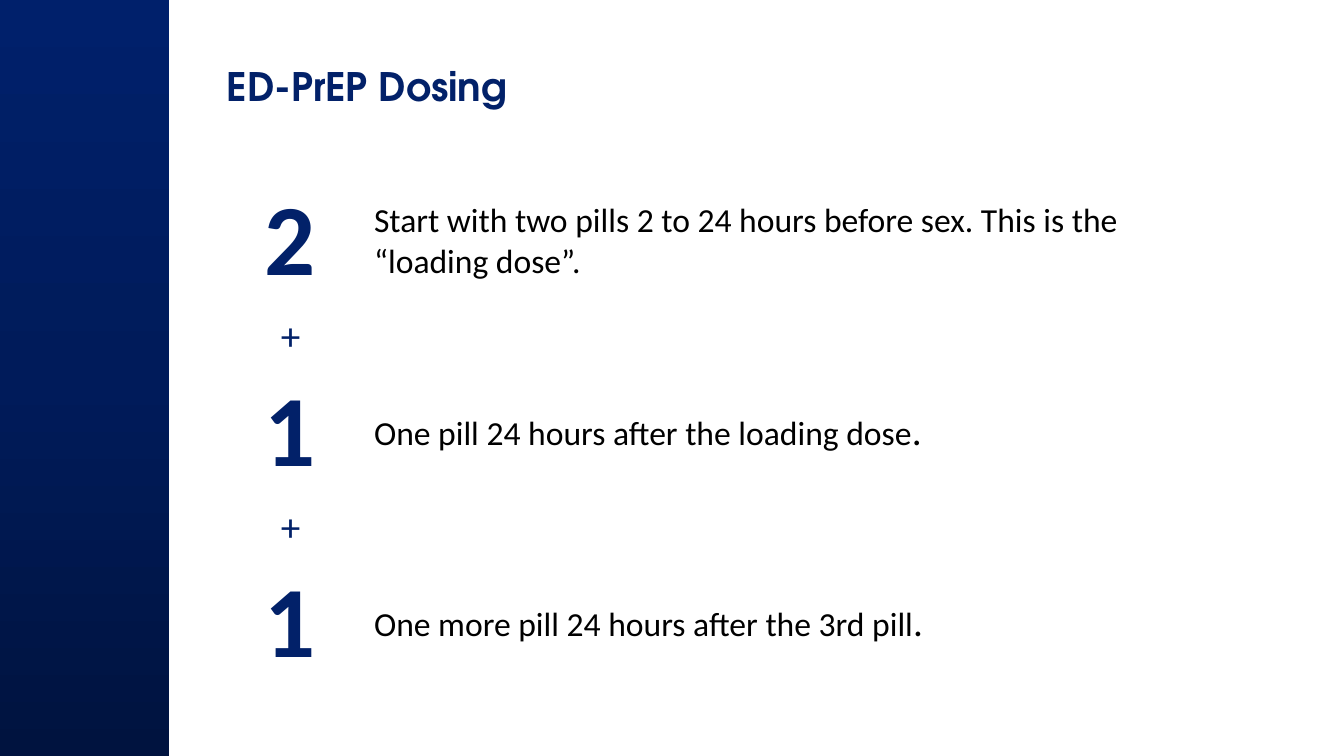
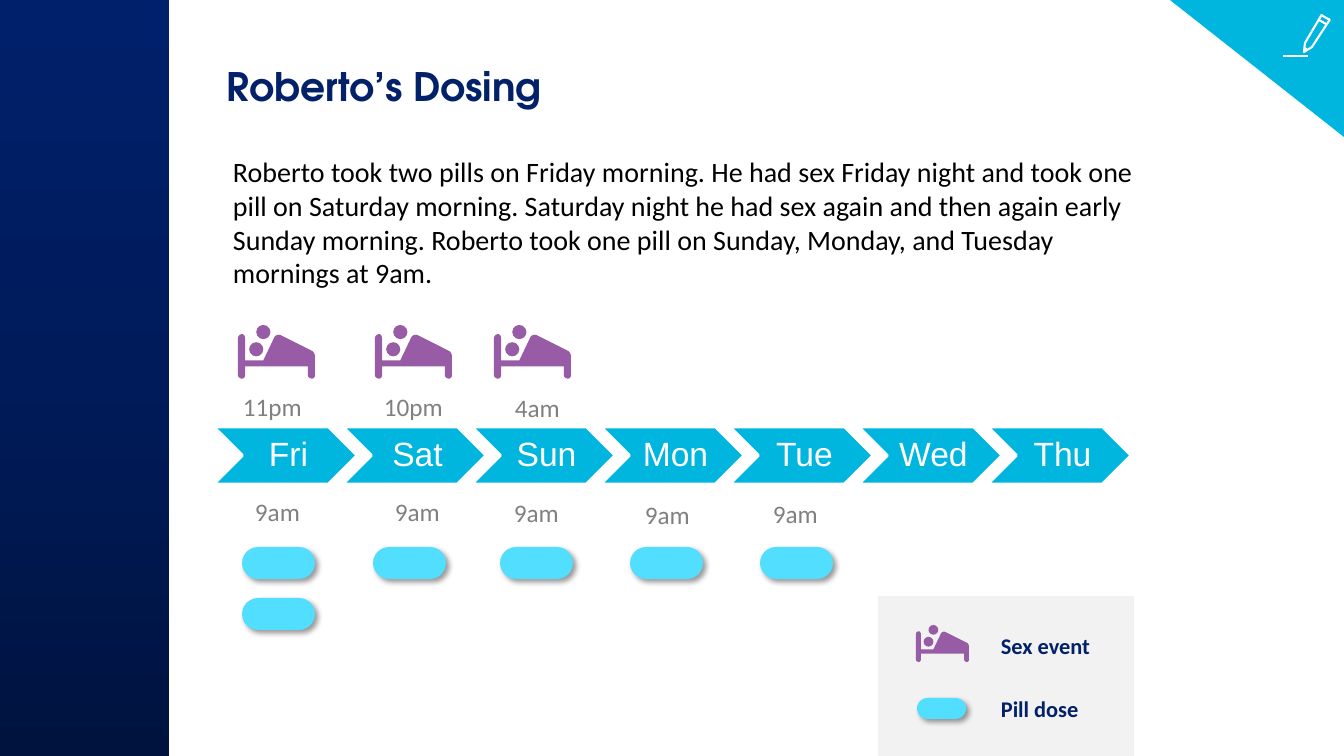
"""Build two slides on event-driven PrEP dosing: the rule and a worked example."""
from copy import deepcopy

from lxml.etree import SubElement
from pptx import Presentation
from pptx.dml.color import RGBColor
from pptx.enum.shapes import MSO_CONNECTOR, MSO_SHAPE
from pptx.enum.text import MSO_ANCHOR, PP_ALIGN
from pptx.oxml.ns import qn
from pptx.util import Emu, Pt

SLIDE_WIDTH, SLIDE_HEIGHT = 1344, 756
SCALE = 12192000 / SLIDE_WIDTH
COLORS = {
    "navy": "022169", "band_bottom": "00133F", "band_middle": "001B5A", "band_top": "00206B",
    "cyan": "00B5DE", "pill": "52DFFF", "purple": "975CA5", "panel": "F2F2F2",
    "gray": "808080", "black": "000000", "white": "FFFFFF",
}
TITLE_FONT, BODY_FONT, DAY_FONT = "TeX Gyre Adventor", "Calibri", "Arial"

DOSING_TITLE = "ED-PrEP Dosing"
DOSES = [
    ("2", "Start with two pills 2 to 24 hours before sex. This is the “loading dose”.", ""),
    ("+", "", ""),
    ("1", "One pill 24 hours after the loading dose", "."),
    ("+", "", ""),
    ("1", "One more pill 24 hours after the 3rd pill", "."),
]
DOSE_COLUMNS = (147, 785)
DOSE_HEIGHT, PLUS_HEIGHT = 133, 58

EXAMPLE_TITLE = "Roberto’s Dosing"
STORY = (
    "Roberto took two pills on Friday morning. He had sex Friday night and took one pill on "
    "Saturday morning. Saturday night he had sex again and then again early Sunday morning. "
    "Roberto took one pill on Sunday, Monday, and Tuesday mornings at 9am."
)
DAYS = ["Fri", "Sat", "Sun", "Mon", "Tue", "Wed", "Thu"]
DAY_LEFT, DAY_TOP, DAY_PITCH = 214, 427, 129
EVENTS = [("11pm", 238, 233, 386), ("10pm", 375, 374, 386), ("4am", 494, 505, 387)]
PILL_TIMES = [
    ("9am", 242, 245, 491, 2), ("9am", 373, 385, 491, 1), ("9am", 500, 504, 492, 1),
    ("9am", 630, 635, 494, 1), ("9am", 760, 763, 493, 1),
]
PILL_TOP, PILL_PITCH, BED_TOP = 547, 51, 325
LEGEND = [("Sex event", 627), ("Pill dose", 690)]

BED_WIDTH = 76
BED_HEADS = [(11, 17), (18, 0)]
BED_FRAME = [
    (72, 25), (42, 10), (40, 9, 37, 10, 36, 12), (25, 35), (7, 35), (7, 13),
    (7, 11, 6, 9, 4, 9), (2, 9, 0, 11, 0, 13), (0, 50), (0, 51, 2, 53, 4, 53),
    (6, 53, 7, 51, 7, 50), (7, 41), (69, 41), (69, 50), (69, 51, 71, 53, 73, 53),
    (75, 53, 76, 51, 76, 50), (76, 31), (76, 29, 75, 26, 72, 25),
]
PENCIL_OUTLINE = [
    (1312, 47), (1304, 52), (1305, 43), (1321, 16), (1321, 15, 1322, 15, 1323, 16),
    (1328, 19), (1330, 19, 1330, 20, 1329, 21),
]
PENCIL_STROKES = [(1319, 20, 1326, 24), (1305, 48, 1307, 50), (1283, 56, 1308, 56)]


def px(length):
    return Emu(round(length * SCALE))


def color(name):
    return RGBColor.from_string(COLORS[name])


def write_text(frame, text, size=18, font=BODY_FONT, fill="black", bold=False,
               align=PP_ALIGN.LEFT, spacing=None):
    paragraph = frame.paragraphs[0]
    paragraph.alignment = align
    if spacing:
        paragraph.line_spacing = spacing
    run = paragraph.add_run()
    run.text = text
    run.font.size, run.font.name, run.font.bold = Pt(size), font, bold
    run.font.color.rgb = color(fill)


def add_label(slide, text, left, top, width, height, wrap=False, **text_format):
    frame = slide.shapes.add_textbox(px(left), px(top), px(width), px(height)).text_frame
    frame.word_wrap = wrap
    write_text(frame, text, **text_format)


def paint(shape, fill=None, line=None, line_width=1.5):
    shape.shadow.inherit = False
    if fill:
        shape.fill.solid()
        shape.fill.fore_color.rgb = color(fill)
    else:
        shape.fill.background()
    if line:
        shape.line.color.rgb = color(line)
        shape.line.width = Pt(line_width)
    else:
        shape.line.fill.background()


def add_shape(slide, kind, left, top, width, height, **paint_format):
    shape = slide.shapes.add_shape(kind, px(left), px(top), px(width), px(height))
    paint(shape, **paint_format)
    return shape


def flatten(segments, steps=5):
    points = [segments[0]]
    for segment in segments[1:]:
        if len(segment) == 2:
            points.append(segment)
            continue
        controls = [points[-1], segment[:2], segment[2:4], segment[4:]]
        for step in range(1, steps + 1):
            t = step / steps
            weights = ((1 - t) ** 3, 3 * t * (1 - t) ** 2, 3 * t * t * (1 - t), t ** 3)
            points.append(tuple(
                sum(weight * point[axis] for weight, point in zip(weights, controls))
                for axis in (0, 1)))
    return points


def add_outline(slide, segments, left=0, top=0, factor=1, **paint_format):
    points = [(px(left + x * factor), px(top + y * factor)) for x, y in flatten(segments)]
    builder = slide.shapes.build_freeform(*points[0], scale=1.0)
    builder.add_line_segments(points[1:], close=True)
    paint(builder.convert_to_shape(), **paint_format)


def add_bed(slide, left, top, width):
    factor = width / BED_WIDTH
    for x, y in BED_HEADS:
        add_shape(slide, MSO_SHAPE.OVAL, left + x * factor, top + y * factor,
                  14 * factor, 14 * factor, fill="purple")
    add_outline(slide, BED_FRAME, left, top, factor, fill="purple")


def add_pill(slide, left, top, width, height):
    pill = add_shape(slide, MSO_SHAPE.ROUNDED_RECTANGLE, left, top, width, height, fill="pill")
    pill.adjustments[0] = 0.5
    effects = pill.element.spPr.find(qn("a:effectLst"))
    shadow = SubElement(effects, qn("a:outerShdw"), blurRad=str(Pt(4)), dist=str(Pt(3)),
                        dir="2700000", algn="tl", rotWithShape="0")
    tint = SubElement(shadow, qn("a:srgbClr"), val=COLORS["black"])
    SubElement(tint, qn("a:alpha"), val="40000")


def add_stroke(slide, *ends):
    stroke = slide.shapes.add_connector(MSO_CONNECTOR.STRAIGHT, *map(px, ends))
    stroke.line.color.rgb = color("white")
    stroke.line.width = Pt(1.5)
    SubElement(stroke._element.spPr, qn("a:effectLst"))


def add_base_slide(presentation, title):
    slide = presentation.slides.add_slide(presentation.slide_layouts[6])
    band = add_shape(slide, MSO_SHAPE.RECTANGLE, 0, 0, 169, SLIDE_HEIGHT)
    band.fill.gradient()
    band.fill.gradient_angle = 90
    stop_list = band.element.spPr.find(".//" + qn("a:gsLst"))
    stop_list.insert(1, deepcopy(stop_list[0]))
    names = ("band_bottom", "band_middle", "band_top")
    for index, (stop, name) in enumerate(zip(band.fill.gradient_stops, names)):
        stop.position = index / 2
        stop.color.rgb = color(name)
    add_label(slide, title, 217, 57, 1008, 93, wrap=True, size=28, font=TITLE_FONT,
              fill="navy", bold=True)
    return slide


def build_dosing(presentation):
    slide = add_base_slide(presentation, DOSING_TITLE)
    heights = [PLUS_HEIGHT if dose[0] == "+" else DOSE_HEIGHT for dose in DOSES]
    table = slide.shapes.add_table(len(DOSES), 2, px(217), px(175), px(sum(DOSE_COLUMNS)),
                                   px(sum(heights))).table
    table.first_row = table.horz_banding = False
    for column, width in zip(table.columns, DOSE_COLUMNS):
        column.width = px(width)
    for row, height, (count, instruction, stop) in zip(table.rows, heights, DOSES):
        row.height = px(height)
        count_cell, text_cell = row.cells
        for cell in row.cells:
            cell.fill.background()
        is_plus = count == "+"
        write_text(count_cell.text_frame, count, size=28 if is_plus else 72, fill="navy",
                   bold=not is_plus, align=PP_ALIGN.CENTER)
        text_cell.vertical_anchor = MSO_ANCHOR.MIDDLE
        for text, size in ((instruction, 24), (stop, 28)):
            if text:
                write_text(text_cell.text_frame, text, size=size)


def build_example(presentation):
    slide = add_base_slide(presentation, EXAMPLE_TITLE)
    add_label(slide, STORY, 223, 150, 947, 146, wrap=True, size=20)

    for index, day in enumerate(DAYS):
        chevron = add_shape(slide, MSO_SHAPE.CHEVRON, DAY_LEFT + index * DAY_PITCH, DAY_TOP,
                            143, 57, fill="cyan", line="white", line_width=2)
        frame = chevron.text_frame
        frame.word_wrap = False
        frame.vertical_anchor = MSO_ANCHOR.MIDDLE
        frame.margin_left = px(10)
        frame.margin_right = frame.margin_top = frame.margin_bottom = px(4)
        write_text(frame, day, size=24, font=DAY_FONT, fill="white",
                   align=PP_ALIGN.CENTER, spacing=0.9)

    for time, bed_left, left, top in EVENTS:
        add_bed(slide, bed_left, BED_TOP, 77)
        add_label(slide, time, left, top, 80, 40, fill="gray")
    for time, pill_left, left, top, count in PILL_TIMES:
        add_label(slide, time, left, top, 66, 40, fill="gray")
        for index in range(count):
            add_pill(slide, pill_left, PILL_TOP + index * PILL_PITCH, 73, 32)

    corner = add_shape(slide, MSO_SHAPE.RIGHT_TRIANGLE, 1170, 0, 174, 137, fill="cyan")
    corner.rotation = 180
    add_outline(slide, PENCIL_OUTLINE, line="white")
    for stroke in PENCIL_STROKES:
        add_stroke(slide, *stroke)

    add_shape(slide, MSO_SHAPE.RECTANGLE, 878, 596, 256, 160, fill="panel")
    add_bed(slide, 916, 625, 53)
    add_pill(slide, 917, 698, 49, 21)
    for text, top in LEGEND:
        add_label(slide, text, 991, top, 111, 37, size=16, fill="navy", bold=True)


def main():
    presentation = Presentation()
    presentation.slide_width, presentation.slide_height = px(SLIDE_WIDTH), px(SLIDE_HEIGHT)
    build_dosing(presentation)
    build_example(presentation)
    presentation.save("out.pptx")


if __name__ == "__main__":
    main()
